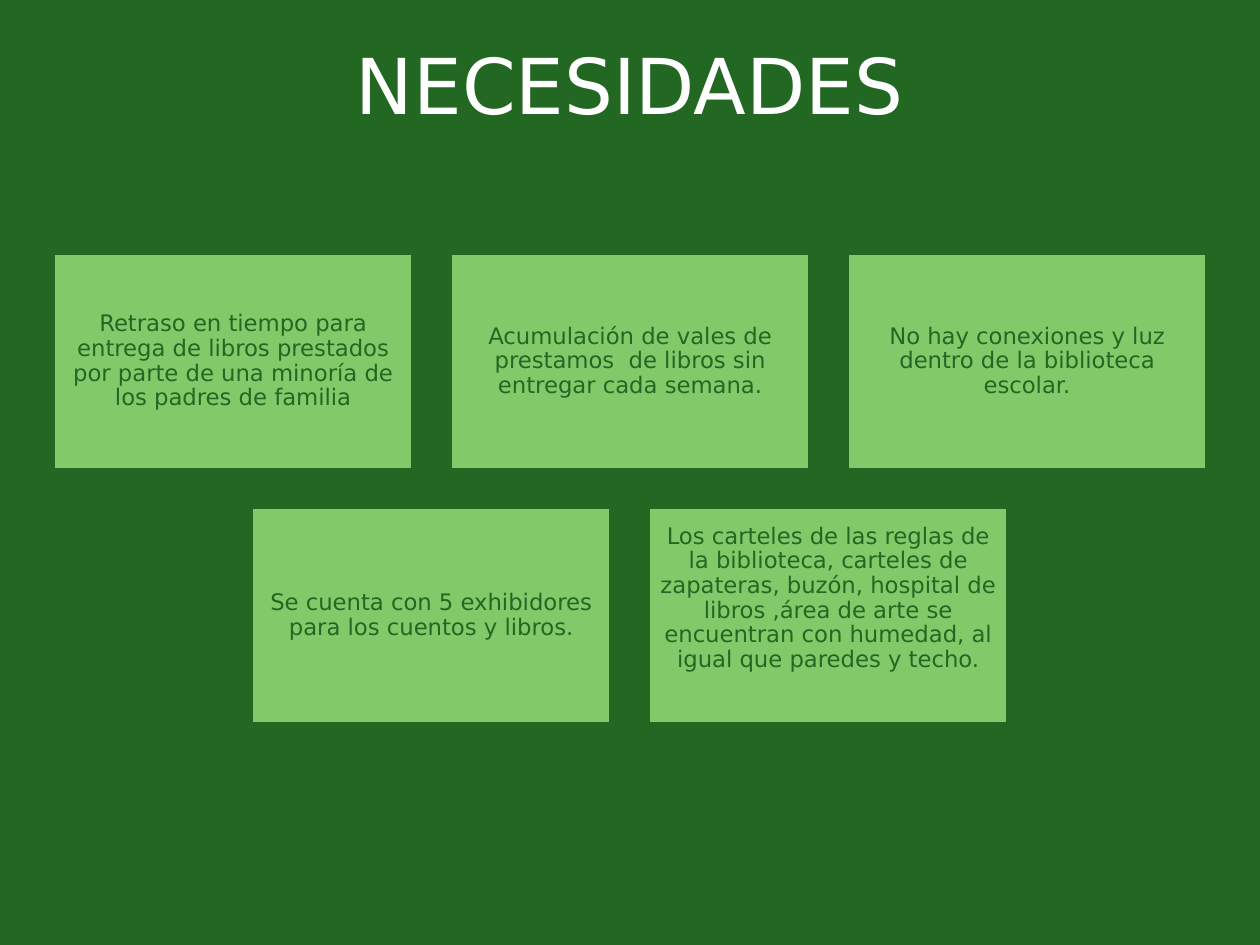
"""Build the slide of library needs as two centred rows of cards."""
import pptx
import pptx.dml.color
import pptx.enum.shapes
import pptx.enum.text
import pptx.util

RGBColor = pptx.dml.color.RGBColor
DARK = RGBColor(0x22, 0x68, 0x22)
LIGHT = RGBColor(0x81, 0xCA, 0x6A)
WHITE = RGBColor(0xFF, 0xFF, 0xFF)

TITLE = "NECESIDADES"
ROWS = [
    [
        ("Retraso en tiempo para entrega de libros prestados por parte de una minoría de los padres de familia", 6),
        ("Acumulación de vales de prestamos  de libros sin entregar cada semana.", 6),
        ("No hay conexiones y luz dentro de la biblioteca escolar.", 6),
    ],
    [
        ("Se cuenta con 5 exhibidores para los cuentos y libros.", 6),
        ("Los carteles de las reglas de la biblioteca, carteles de zapateras, buzón, hospital de libros ,área de arte "
         "se encuentran con humedad, al igual que paredes y techo.", 40),
    ],
]
WIDTH, HEIGHT = 1260, 945
CARD_W, CARD_H, GAP, TOP = 360, 217, 37, 253
INSET = 6
FACE = "DejaVu Sans"
HEAD = {"name": FACE, "size": pptx.util.Pt(44), "color": WHITE}
BODY = {"name": FACE, "size": pptx.util.Pt(13), "color": DARK}


def px(count):
    return round(count * 914400 / 126)


def write(shape, text, style, spacing=1.0):
    frame = shape.text_frame
    frame.word_wrap = True
    frame.vertical_anchor = pptx.enum.text.MSO_ANCHOR.MIDDLE
    para = frame.paragraphs[0]
    para.alignment = pptx.enum.text.PP_ALIGN.CENTER
    para.line_spacing = spacing
    run = para.add_run()
    run.text = text
    for key, value in style.items():
        if key == "color":
            run.font.color.rgb = value
        else:
            setattr(run.font, key, value)


def add_card(slide, left, top, text, bottom):
    kind = pptx.enum.shapes.MSO_SHAPE.RECTANGLE
    card = slide.shapes.add_shape(kind, px(left), px(top), px(CARD_W), px(CARD_H))
    card.shadow.inherit = False
    card.fill.solid()
    card.fill.fore_color.rgb = LIGHT
    card.line.color.rgb = DARK
    card.line.width = pptx.util.Pt(2)
    insets = {"left": INSET, "top": INSET, "right": INSET, "bottom": bottom}
    for side, size in insets.items():
        setattr(card.text_frame, f"margin_{side}", px(size))
    write(card, text, BODY, 0.9)


def main():
    deck = pptx.Presentation()
    deck.slide_width, deck.slide_height = px(WIDTH), px(HEIGHT)
    slide = deck.slides.add_slide(deck.slide_layouts[6])
    slide.background.fill.solid()
    slide.background.fill.fore_color.rgb = DARK

    title = slide.shapes.add_textbox(px(53), px(21), px(WIDTH - 2 * 53), px(126))
    write(title, TITLE, HEAD)

    for row, cards in enumerate(ROWS):
        span = len(cards) * (CARD_W + GAP) - GAP
        start = (WIDTH - span) // 2
        for col, (text, bottom) in enumerate(cards):
            left = start + col * (CARD_W + GAP)
            add_card(slide, left, TOP + row * (CARD_H + GAP), text, bottom)

    deck.save("out.pptx")


if __name__ == "__main__":
    main()
